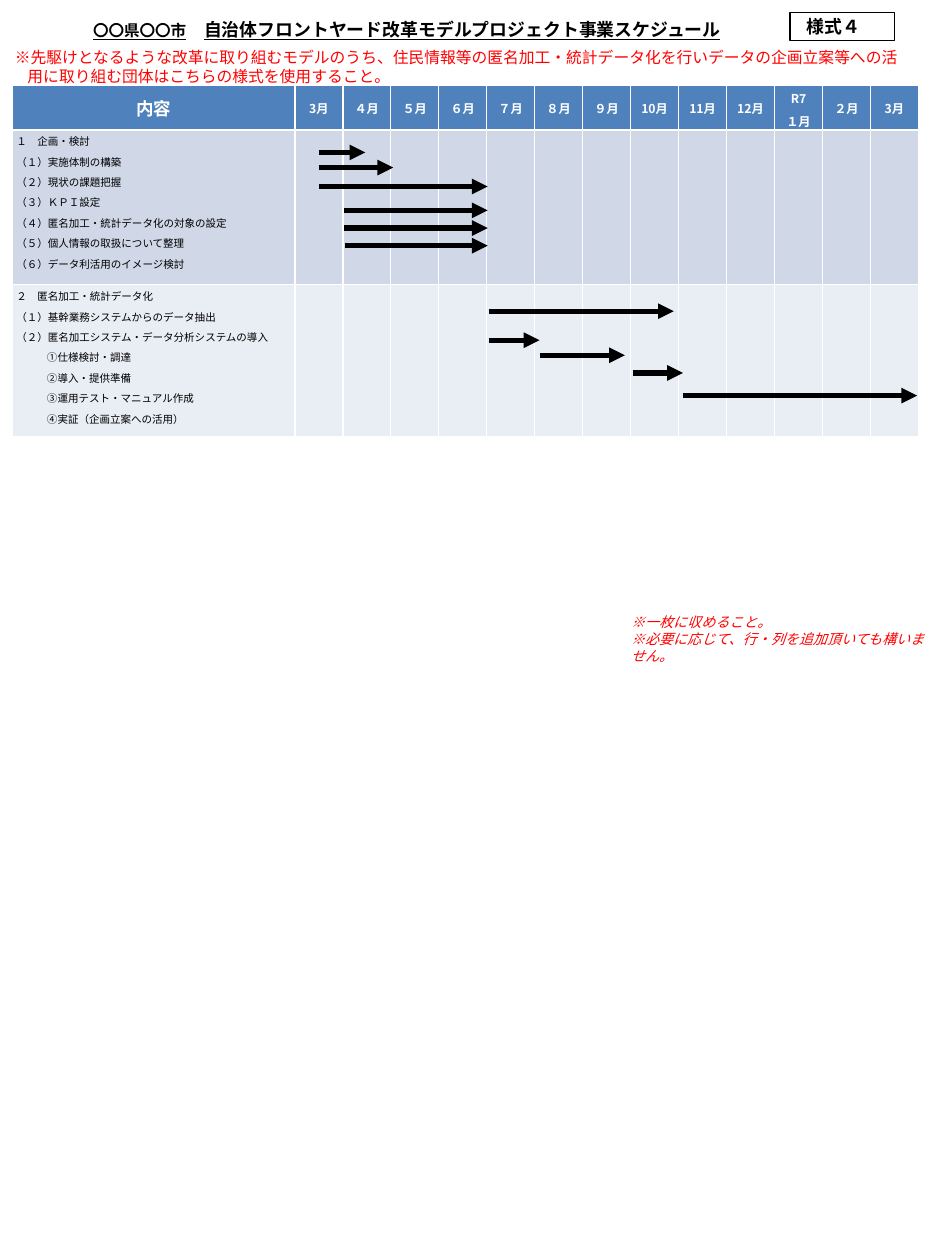
from lxml.etree import SubElement
from pptx import Presentation
from pptx.dml.color import RGBColor
from pptx.enum.shapes import MSO_CONNECTOR, MSO_SHAPE
from pptx.enum.text import MSO_ANCHOR, MSO_AUTO_SIZE, PP_ALIGN
from pptx.oxml.ns import qn
from pptx.util import Inches, Pt

GOTHIC = "Noto Sans CJK JP"
HEADER_FILL = "4F81BD"
MONTHS = ["3月", "４月", "５月", "６月", "７月", "８月", "９月",
          "10月", "11月", "12月", "R7\n１月", "２月", "3月"]
PHASES = [
    ("D0D8E8", ["１　企画・検討", "（１）実施体制の構築", "（２）現状の課題把握",
                "（３）ＫＰＩ設定", "（４）匿名加工・統計データ化の対象の設定",
                "（５）個人情報の取扱について整理", "（６）データ利活用のイメージ検討"]),
    ("E9EDF4", ["２　匿名加工・統計データ化", "（１）基幹業務システムからのデータ抽出",
                "（２）匿名加工システム・データ分析システムの導入", "　①仕様検討・調達",
                "　②導入・提供準備", "　③運用テスト・マニュアル作成",
                "　④実証（企画立案への活用）"]),
]
PERIODS = [
    (0.5, 1.47, 0.53), (0.5, 2.05, 0.65), (0.5, 4.02, 0.8),
    (1.02, 4.02, 0.99), (1.02, 4.02, 1.13), (1.05, 4.02, 1.27),
    (4.04, 7.9, 1.79), (4.04, 5.1, 2.02), (5.1, 6.88, 2.14),
    (7.04, 8.09, 2.28), (8.09, 12.97, 2.46),
]


def color(value):
    """Turn a hex string into a colour."""
    return RGBColor.from_string(value)


def apply(target, values):
    """Set each attribute of the target from a dict."""
    for name, value in values.items():
        setattr(target, name, value)


def write(frame, lines, size, ink="000000", face=GOTHIC, align=PP_ALIGN.LEFT,
          gap=0, **styles):
    """Fill a text frame with one formatted paragraph per line."""
    for index, line in enumerate(lines):
        paragraph = frame.add_paragraph() if index else frame.paragraphs[0]
        apply(paragraph, {"alignment": align, "space_before": Pt(gap if index else 0)})
        run = paragraph.add_run()
        run.text = line
        apply(run.font, {"name": face, "size": Pt(size), **styles})
        run.font.color.rgb = color(ink)
        SubElement(run.font._element, qn("a:ea"), typeface=GOTHIC)


def indent(paragraph, left, first=0):
    """Set the left margin and first-line indent of a paragraph."""
    properties = paragraph._p.get_or_add_pPr()
    properties.set("marL", str(Inches(left)))
    properties.set("indent", str(Inches(first)))


def place(shape, box):
    """Move and size a shape to a box in inches."""
    apply(shape, dict(zip(("left", "top", "width", "height"), map(Inches, box))))


def add_title(slide, box):
    """Place the schedule title."""
    title = slide.shapes.title
    place(title, box)
    apply(title.text_frame, {"word_wrap": False, "vertical_anchor": MSO_ANCHOR.TOP,
                             "auto_size": MSO_AUTO_SIZE.SHAPE_TO_FIT_TEXT})
    write(title.text_frame, ["自治体フロントヤード改革モデルプロジェクト事業スケジュール"],
          10.2, bold=True, underline=True)


def add_text(slide, box, lines, size, wrap=True, **styles):
    """Place a text box and return its frame."""
    frame = slide.shapes.add_textbox(*map(Inches, box)).text_frame
    apply(frame, {"word_wrap": wrap, "auto_size": MSO_AUTO_SIZE.SHAPE_TO_FIT_TEXT})
    write(frame, lines, size, **styles)
    return frame


def add_form_label(slide, box):
    """Place the framed form number."""
    label = slide.shapes.add_shape(MSO_SHAPE.RECTANGLE, *map(Inches, box))
    label.shadow.inherit = False
    label.fill.solid()
    label.fill.fore_color.rgb = color("FFFFFF")
    label.line.color.rgb = color("000000")
    label.line.width = Pt(0.75)
    apply(label.text_frame, {"margin_left": 0, "margin_right": 0,
                             "vertical_anchor": MSO_ANCHOR.MIDDLE})
    write(label.text_frame, ["様式４　"], 10.2, align=PP_ALIGN.CENTER, bold=True)


def fill_cell(cell, fill, lines=(), size=6, anchor=MSO_ANCHOR.TOP, **styles):
    """Colour a table cell and write its lines."""
    cell.fill.solid()
    cell.fill.fore_color.rgb = color(fill)
    margins = ("margin_left", "margin_top", "margin_right", "margin_bottom")
    apply(cell, {"vertical_anchor": anchor, **dict.fromkeys(margins, Inches(0.03))})
    write(cell.text_frame, lines, size, gap=3, **styles)


def add_period(slide, start, end, y):
    """Draw one horizontal arrow between two positions in inches."""
    arrow = slide.shapes.add_connector(
        MSO_CONNECTOR.STRAIGHT, *map(Inches, (start, y, end, y)))
    arrow.line.color.rgb = color("000000")
    arrow.line.width = Pt(3)
    SubElement(arrow.line._get_or_add_ln(), qn("a:tailEnd"), type="triangle")
    SubElement(arrow._element.spPr, qn("a:effectLst"))


def add_schedule(slide, box, task_width=2.24, row_heights=(0.35, 1.23, 1.21)):
    """Place the month table and the arrows over it."""
    left, top, width, _ = box
    month_width = (width - task_width) / len(MONTHS)
    table = slide.shapes.add_table(
        len(row_heights), len(MONTHS) + 1, *map(Inches, box)).table
    for index, column in enumerate(table.columns):
        column.width = Inches(month_width if index else task_width)
    for row, height in zip(table.rows, row_heights):
        row.height = Inches(height)
    for index, heading in enumerate(["内容", *MONTHS]):
        fill_cell(table.cell(0, index), HEADER_FILL, heading.split("\n"),
                  7 if index else 10, MSO_ANCHOR.MIDDLE, ink="FFFFFF",
                  align=PP_ALIGN.CENTER, bold=True)
    for row, (fill, tasks) in enumerate(PHASES, 1):
        fill_cell(table.cell(row, 0), fill, tasks, bold=False)
        for column in range(1, len(MONTHS) + 1):
            fill_cell(table.cell(row, column), fill)
        for paragraph in table.cell(row, 0).text_frame.paragraphs:
            if paragraph.text.startswith("　"):
                indent(paragraph, 0.16)
    origin = left + task_width
    for start, end, offset in PERIODS:
        add_period(slide, origin + start * month_width, origin + end * month_width,
                   top + offset)


def main():
    """Build the schedule slide."""
    presentation = Presentation()
    apply(presentation, {"slide_width": Inches(7.5), "slide_height": Inches(10)})
    slide = presentation.slides.add_slide(presentation.slide_layouts[5])
    add_title(slide, (1.52, 0.1, 4.37, 0.27))
    add_form_label(slide, (6.27, 0.1, 0.83, 0.22))
    add_schedule(slide, (0.1, 0.68, 7.19, 2.79))
    add_text(slide, (0.64, 0.12, 0.96, 0.25), ["〇〇県〇〇市"], 8.9, wrap=False,
             bold=True, underline=True)
    add_text(slide, (4.91, 4.82, 2.59, 0.37),
             ["※一枚に収めること。", "※必要に応じて、行・列を追加頂いても構いません。"],
             8, ink="FF0000", face="Calibri", italic=True)
    notice = add_text(slide, (0.02, 0.33, 7.27, 0.4), [
        "※先駆けとなるような改革に取り組むモデルのうち、住民情報等の匿名加工・統計データ化を行い"
        "データの企画立案等への活用に取り組む団体はこちらの様式を使用すること。"], 9, ink="FF0000")
    indent(notice.paragraphs[0], 0.1, -0.1)
    presentation.save("out.pptx")


if __name__ == "__main__":
    main()
